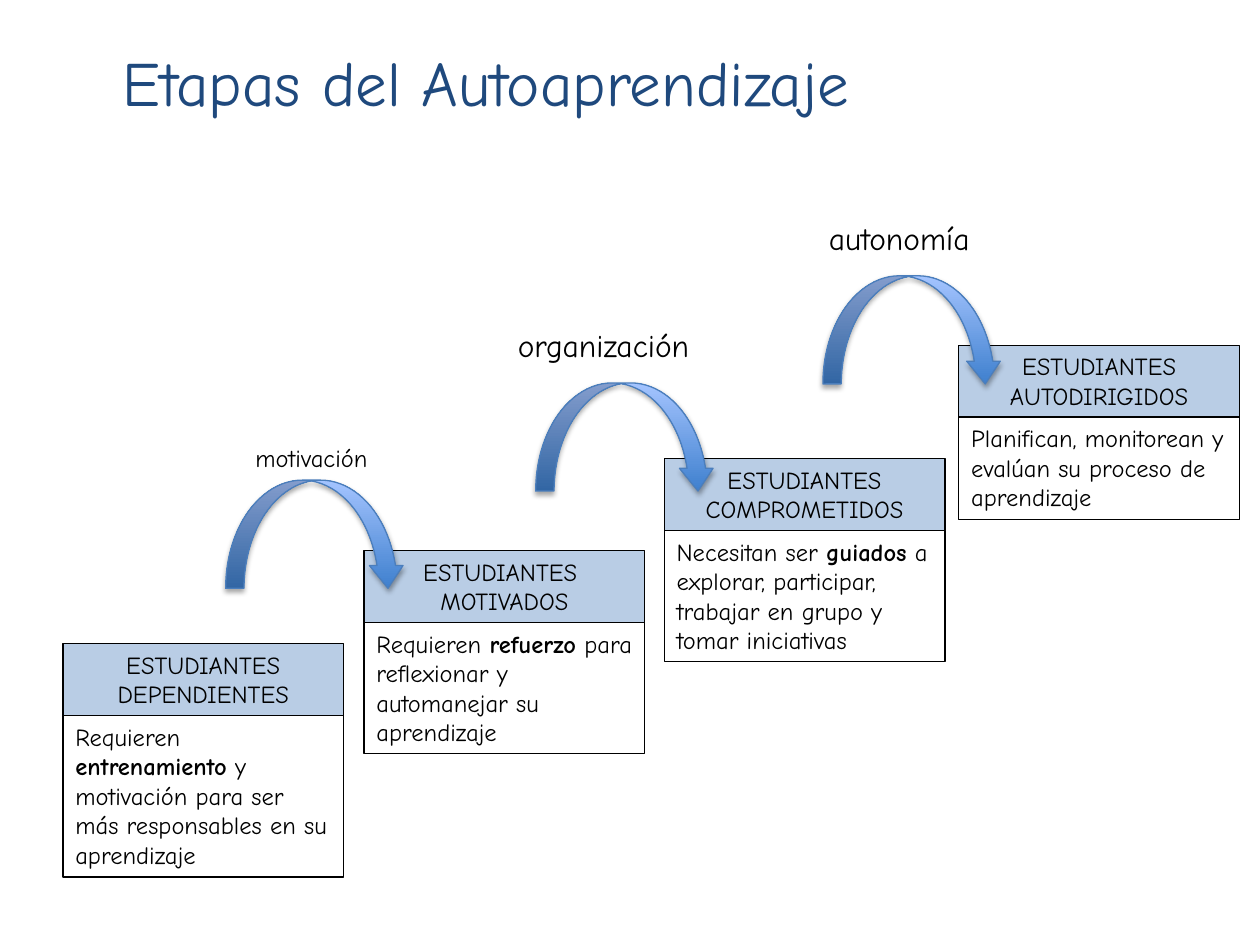
"""Build the slide on the stages of self-learning."""
from lxml import etree
from pptx import Presentation
from pptx.dml.color import RGBColor as RGB
from pptx.enum.shapes import MSO_SHAPE as Kind
from pptx.enum.text import MSO_ANCHOR as Anchor, MSO_AUTO_SIZE as Auto, PP_ALIGN as Align
from pptx.oxml.ns import qn
from pptx.util import Cm, Pt

HUES = {"title": "1F497D", "text": "000000", "head": "B9CDE5", "edge": "4B7EBC",
        "low": "3F80CE", "high": "A4C4FF", "shade": "000000"}
INK = {name: RGB.from_string(code) for name, code in HUES.items()}
WIDE, HEAD = 5.66, 1.45


def write(frame, paras, size=14, hue="text", align=Align.LEFT):
    for i, runs in enumerate(paras):
        para = frame.add_paragraph() if i else frame.paragraphs[0]
        para.alignment = align
        for j, text in enumerate(runs):
            run = para.add_run()
            run.text = text
            font = run.font
            font.name, font.size, font.bold = "Comic Neue", Pt(size), j == 1
            font.color.rgb = INK[hue]


def add_box(group, left, top, high, paras, align, fill=None):
    box = group.shapes.add_shape(Kind.RECTANGLE, Cm(left), Cm(top), Cm(WIDE), Cm(high))
    box.shadow.inherit = False
    box.fill.background()
    if fill:
        box.fill.solid()
        box.fill.fore_color.rgb = INK[fill]
    box.line.color.rgb = INK["text"]
    box.line.width = Pt(0.75)
    frame = box.text_frame
    frame.word_wrap = True
    frame.auto_size = Auto.SHAPE_TO_FIT_TEXT
    frame.vertical_anchor = Anchor.TOP
    write(frame, paras, align=align)


deck = Presentation()
deck.slide_width, deck.slide_height = Cm(25.4), Cm(19.05)
slide = deck.slides.add_slide(deck.slide_layouts[6])
shapes = slide.shapes

title = shapes.add_textbox(Cm(0.89), Cm(0.05), Cm(17.8), Cm(3.18)).text_frame
title.word_wrap = True
title.vertical_anchor = Anchor.MIDDLE
write(title, [["Etapas del Autoaprendizaje"]], 36, "title", Align.CENTER)

steps = [
    (1.27, 12.98, 3.25, [["ESTUDIANTES DEPENDIENTES"]],
     ["Requieren ", "entrenamiento",
      " y motivación para ser más responsables en su aprendizaje"]),
    (7.34, 11.1, 2.64, [["ESTUDIANTES "], ["MOTIVADOS"]],
     ["Requieren ", "refuerzo", " para reflexionar y automanejar su aprendizaje"]),
    (13.39, 9.25, 2.64, [["ESTUDIANTES COMPROMETIDOS"]],
     ["Necesitan ser ", "guiados",
      " a explorar, participar, trabajar en grupo y tomar iniciativas"]),
    (19.33, 6.96, 2.06, [["ESTUDIANTES AUTODIRIGIDOS"]],
     ["Planifican, monitorean y evalúan su proceso de aprendizaje"]),
]
group = shapes.add_group_shape()
for left, top, high, name, body in steps:
    add_box(group, left, top, HEAD, name, Align.CENTER, "head")
    add_box(group, left, top + HEAD, high, [body], Align.LEFT)

labels = [
    ("motivación", 14, 4.9, 8.81, 2.95, 0.86),
    ("organización", 18, 10.19, 6.45, 4.19, 1.02),
    ("autonomía", 18, 16.46, 4.29, 3.51, 1.02),
]
for text, size, left, top, wide, high in labels:
    frame = shapes.add_textbox(Cm(left), Cm(top), Cm(wide), Cm(high)).text_frame
    frame.word_wrap = False
    frame.auto_size = Auto.SHAPE_TO_FIT_TEXT
    write(frame, [[text]], size)

for left, top in [(4.55, 9.68), (10.8, 7.72), (16.59, 5.56)]:
    arrow = shapes.add_shape(Kind.CURVED_DOWN_ARROW, Cm(left), Cm(top), Cm(3.61), Cm(2.18))
    for i, ratio in enumerate((0.17, 0.31, 0.21)):
        arrow.adjustments[i] = ratio
    arrow.fill.gradient()
    arrow.fill.gradient_angle = 90
    for stop, spot, hue in zip(arrow.fill.gradient_stops, (0, 1), ("low", "high")):
        stop.position = spot
        stop.color.rgb = INK[hue]
    arrow.line.color.rgb = INK["edge"]
    arrow.line.width = Pt(0.75)
    arrow.shadow.inherit = False
    effects = arrow._element.spPr.find(qn("a:effectLst"))
    shade = etree.SubElement(effects, qn("a:outerShdw"), blurRad=str(Pt(3.1)),
                             dist=str(Pt(1.8)), dir="5400000", rotWithShape="0")
    tint = etree.SubElement(shade, qn("a:srgbClr"), val=HUES["shade"])
    etree.SubElement(tint, qn("a:alpha"), val="35000")

deck.save("out.pptx")
